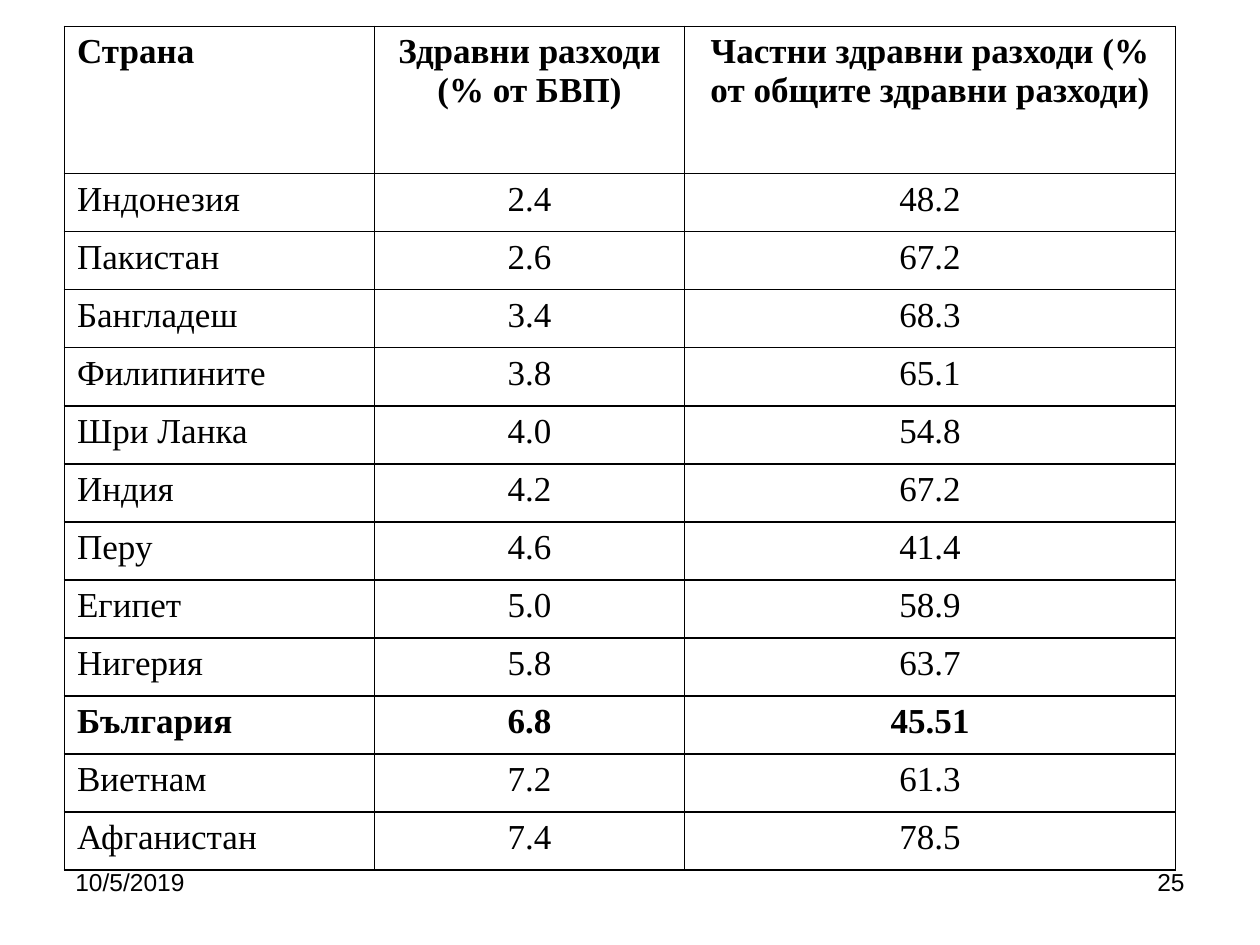
from dataclasses import dataclass

from lxml.etree import SubElement
from pptx import Presentation
from pptx.dml.color import RGBColor
from pptx.enum.text import PP_ALIGN
from pptx.oxml.ns import qn
from pptx.util import Cm, Pt


@dataclass(frozen=True)
class Theme:
    ink: str = "000000"
    table_font: str = "Times New Roman"
    footer_font: str = "Arial"
    table_size: int = 20
    footer_size: int = 14
    border: float = 1


THEME = Theme()

# Each header cell is a list of paragraphs
HEADER = [
    ["Страна"],
    ["Здравни разходи", "(% от БВП)"],
    ["Частни здравни разходи (% от общите здравни разходи)"],
]
COUNTRIES = [
    ("Индонезия", "2.4", "48.2"),
    ("Пакистан", "2.6", "67.2"),
    ("Бангладеш", "3.4", "68.3"),
    ("Филипините", "3.8", "65.1"),
    ("Шри Ланка", "4.0", "54.8"),
    ("Индия", "4.2", "67.2"),
    ("Перу", "4.6", "41.4"),
    ("Египет", "5.0", "58.9"),
    ("Нигерия", "5.8", "63.7"),
    ("България", "6.8", "45.51"),
    ("Виетнам", "7.2", "61.3"),
    ("Афганистан", "7.4", "78.5"),
]
HIGHLIGHT = "България"
COLUMN_WIDTHS = [6.25, 6.25, 9.9]
HEADER_HEIGHT, ROW_HEIGHT = 2.97, 1.17


def add_run(p, text, font, size, bold=False):
    r = p.add_run()
    r.text = text
    r.font.name = font
    r.font.size = Pt(size)
    r.font.bold = bold
    r.font.color.rgb = RGBColor.from_string(THEME.ink)


def set_borders(cell):
    tc_pr = cell._tc.get_or_add_tcPr()
    for side in ("lnL", "lnR", "lnT", "lnB"):
        ln = SubElement(tc_pr, qn(f"a:{side}"), w=str(Pt(THEME.border)))
        fill = SubElement(ln, qn("a:solidFill"))
        SubElement(fill, qn("a:srgbClr"), val=THEME.ink)


def fill_cell(cell, lines, align, bold):
    set_borders(cell)
    cell.fill.background()
    tf = cell.text_frame
    for i, line in enumerate(lines):
        p = tf.add_paragraph() if i else tf.paragraphs[0]
        p.alignment = align
        add_run(p, line, THEME.table_font, THEME.table_size, bold)


def add_spending_table(s):
    rows = [HEADER] + [[[value] for value in row] for row in COUNTRIES]
    height = HEADER_HEIGHT + ROW_HEIGHT * len(COUNTRIES)
    table = s.shapes.add_table(
        len(rows), len(COLUMN_WIDTHS),
        Cm(1.3), Cm(0.53), Cm(sum(COLUMN_WIDTHS)), Cm(height),
    ).table
    for column, width in zip(table.columns, COLUMN_WIDTHS):
        column.width = Cm(width)
    for i, row in enumerate(rows):
        table.rows[i].height = Cm(ROW_HEIGHT if i else HEADER_HEIGHT)
        bold = i == 0 or row[0] == [HIGHLIGHT]
        for j, lines in enumerate(row):
            align = PP_ALIGN.CENTER if j else PP_ALIGN.JUSTIFY
            fill_cell(table.cell(i, j), lines, align, bold)


def add_footer(s, text, left, align):
    sp = s.shapes.add_textbox(Cm(left), Cm(17.35), Cm(5.93), Cm(1.32))
    tf = sp.text_frame
    tf.word_wrap = True
    p = tf.paragraphs[0]
    p.alignment = align
    add_run(p, text, THEME.footer_font, THEME.footer_size)


def main():
    prs = Presentation()
    prs.slide_width, prs.slide_height = Cm(25.4), Cm(19.05)
    # The slide has no title, so the blank layout fits
    s = prs.slides.add_slide(prs.slide_layouts.get_by_name("Blank"))

    # Page number, table, date
    add_footer(s, "25", 18.2, PP_ALIGN.RIGHT)
    add_spending_table(s)
    add_footer(s, "10/5/2019", 1.27, PP_ALIGN.LEFT)

    prs.save("out.pptx")


if __name__ == "__main__":
    main()
